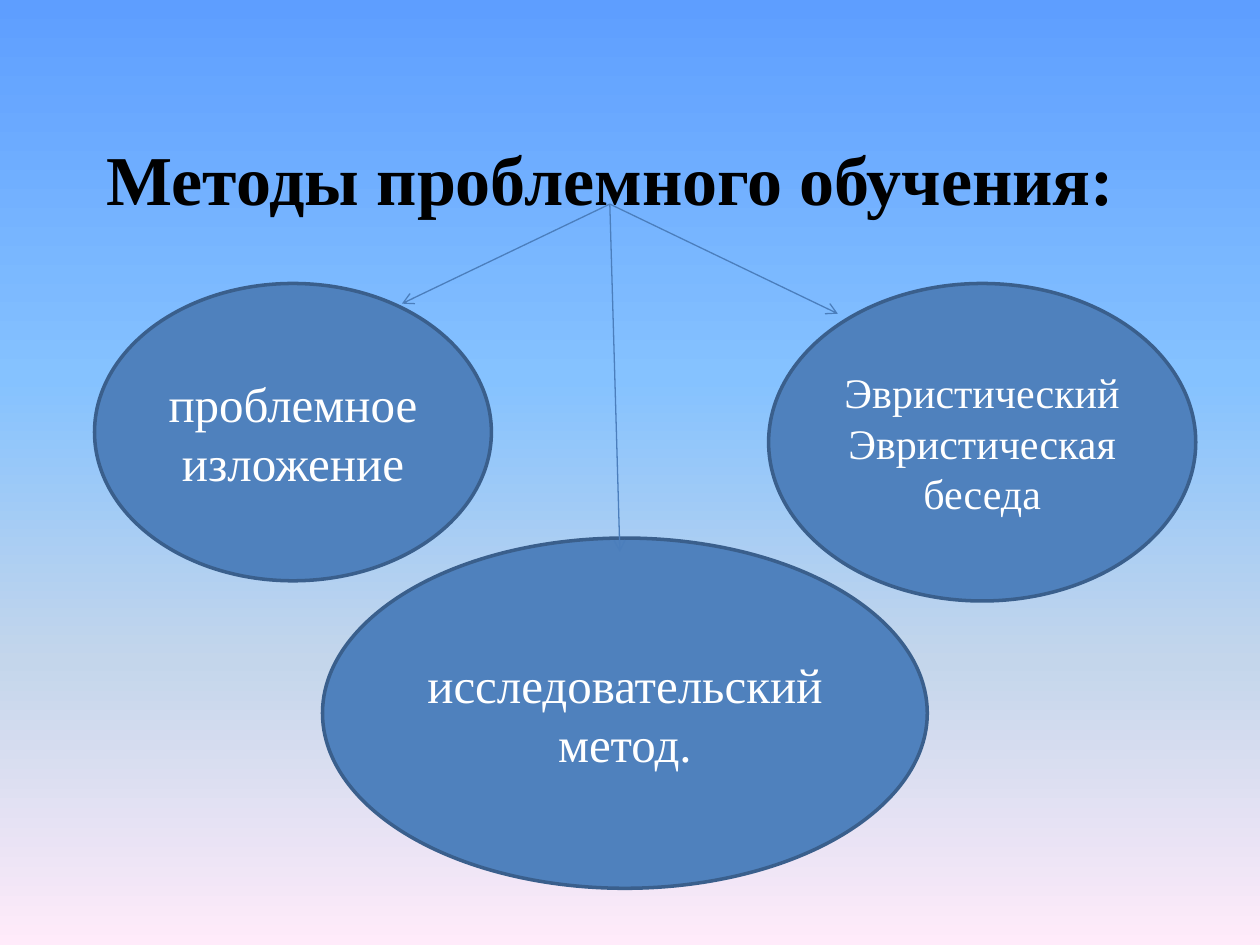
from lxml import etree
from pptx import Presentation
from pptx.dml.color import RGBColor
from pptx.enum.shapes import MSO_CONNECTOR, MSO_SHAPE
from pptx.enum.text import MSO_ANCHOR, PP_ALIGN
from pptx.oxml.ns import qn
from pptx.util import Inches, Pt

OVAL = MSO_SHAPE.OVAL
STRAIGHT = MSO_CONNECTOR.STRAIGHT
MIDDLE = MSO_ANCHOR.MIDDLE
LEFT, CENTER = PP_ALIGN.LEFT, PP_ALIGN.CENTER

BLACK = RGBColor(0x00, 0x00, 0x00)
WHITE = RGBColor(0xFF, 0xFF, 0xFF)
BLUE = RGBColor(0x4F, 0x81, 0xBD)
OUTLINE = RGBColor(0x3A, 0x5F, 0x8C)
ARROW = RGBColor(0x4B, 0x7E, 0xBC)
SKY = [
    (0, RGBColor(0x5E, 0x9E, 0xFF)),
    (40, RGBColor(0x85, 0xC2, 0xFF)),
    (70, RGBColor(0xC4, 0xD6, 0xEB)),
    (100, RGBColor(0xFF, 0xEB, 0xFA)),
]

FONT = "Times New Roman"
TITLE = "Методы проблемного обучения:"
TITLE_BOX = (0.75, 1.03, 8.35, 0.74)
METHODS = [
    ((0.75, 2.25, 3.15, 2.36), 28, ["проблемное изложение"]),
    ((6.1, 2.25, 3.39, 2.52), 24, ["Эвристический", "Эвристическая беседа"]),
    ((2.56, 4.27, 4.8, 2.78), 28, ["исследовательский метод."]),
]
ARROW_START = (4.84, 1.62)
ARROW_ENDS = [(3.19, 2.41), (6.65, 2.49), (4.92, 4.38)]


def set_background(s):
    fill = s.background.fill
    fill.gradient()
    fill.gradient_angle = 270
    stops = next(s.element.iter(qn("a:gsLst")))
    for stop in list(stops):
        stops.remove(stop)
    for percent, color in SKY:
        stop = etree.SubElement(stops, qn("a:gs"), pos=str(percent * 1000))
        etree.SubElement(stop, qn("a:srgbClr"), val=str(color))


def write_lines(tf, lines, align, color, **font):
    tf.word_wrap = True
    for i, line in enumerate(lines):
        p = tf.paragraphs[0] if i == 0 else tf.add_paragraph()
        p.alignment = align
        r = p.add_run()
        r.text = line
        r.font.color.rgb = color
        for name, value in {"name": FONT, **font}.items():
            setattr(r.font, name, value)


def add_title(s, box):
    sp = s.shapes.add_textbox(*map(Inches, box))
    write_lines(sp.text_frame, [TITLE], LEFT, BLACK, size=Pt(40), bold=True)


def add_method(s, box, size, lines):
    sp = s.shapes.add_shape(OVAL, *map(Inches, box))
    sp.shadow.inherit = False
    sp.fill.solid()
    sp.fill.fore_color.rgb = BLUE
    sp.line.color.rgb = OUTLINE
    sp.line.width = Pt(2)
    sp.text_frame.vertical_anchor = MIDDLE
    write_lines(sp.text_frame, lines, CENTER, WHITE, size=Pt(size))


def add_arrow(s, start, end):
    c = s.shapes.add_connector(STRAIGHT, *map(Inches, start + end))
    c.line.color.rgb = ARROW
    c.line.width = Pt(0.75)
    etree.SubElement(c.line._get_or_add_ln(), qn("a:tailEnd"), type="arrow")
    etree.SubElement(c._element.spPr, qn("a:effectLst"))


def main():
    prs = Presentation()
    prs.slide_width, prs.slide_height = Inches(10), Inches(7.5)
    s = prs.slides.add_slide(prs.slide_layouts[6])
    set_background(s)
    add_title(s, TITLE_BOX)
    for box, size, lines in METHODS:
        add_method(s, box, size, lines)
    for end in ARROW_ENDS:
        add_arrow(s, ARROW_START, end)
    prs.save("out.pptx")


if __name__ == "__main__":
    main()
